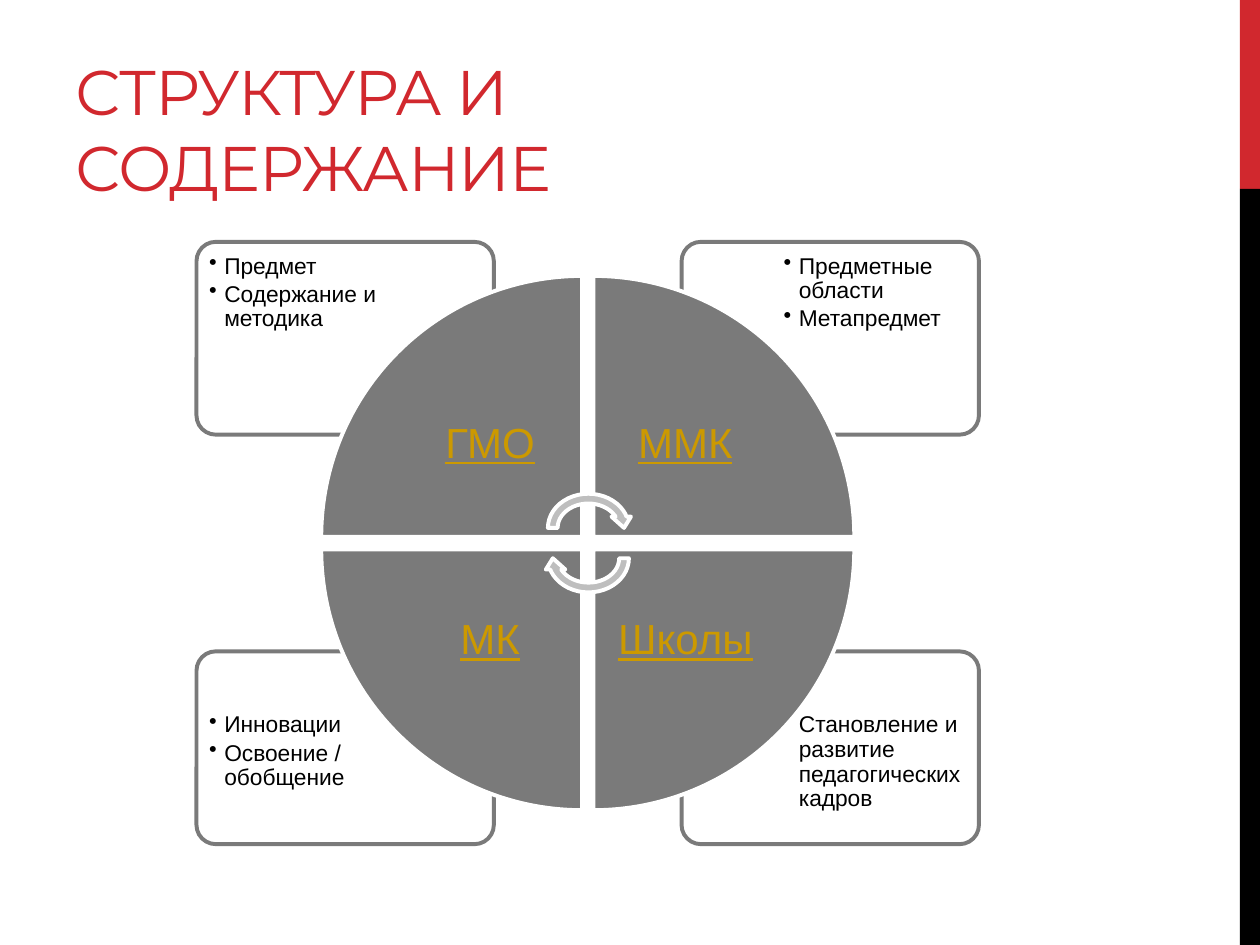
from dataclasses import dataclass

from lxml import etree
from pptx import Presentation
from pptx.dml.color import RGBColor
from pptx.enum.shapes import MSO_SHAPE
from pptx.enum.text import MSO_ANCHOR, MSO_AUTO_SIZE, PP_ALIGN
from pptx.oxml.ns import qn
from pptx.shapes.autoshape import Shape
from pptx.slide import Slide
from pptx.util import Inches, Pt

RECTANGLE = MSO_SHAPE.RECTANGLE
ROUNDED_RECTANGLE = MSO_SHAPE.ROUNDED_RECTANGLE
PIE_WEDGE = MSO_SHAPE.PIE_WEDGE
CIRCULAR_ARROW = MSO_SHAPE.CIRCULAR_ARROW
TITLE_ONLY = 5


@dataclass(frozen=True)
class Theme:
    red: str = "D1282E"
    black: str = "000000"
    white: str = "FFFFFF"
    gray: str = "7A7A7A"
    light_gray: str = "BEBEBE"
    gold: str = "CC9900"
    title_font: str = "Montserrat"
    body_font: str = "Arial"
    title_size: float = 36
    label_size: float = 24
    body_size: float = 13
    line_width: float = 2.25


@dataclass(frozen=True)
class Box:
    left: float
    top: float
    width: float
    height: float

    def lengths(self) -> tuple:
        return tuple(Inches(n) for n in (self.left, self.top, self.width, self.height))


@dataclass(frozen=True)
class Quadrant:
    column: int
    row: int
    rotation: int
    label: str
    bullets: tuple[str, ...]


THEME = Theme()
QUADRANTS = (
    Quadrant(0, 0, 0, "ГМО", ("Предмет", "Содержание и методика")),
    Quadrant(1, 0, 90, "ММК", ("Предметные области", "Метапредмет")),
    Quadrant(1, 1, 180, "Школы", ("Становление и развитие педагогических кадров",)),
    Quadrant(0, 1, 270, "МК", ("Инновации", "Освоение / обобщение")),
)
CARD_LEFTS, CARD_TOPS = (1.56, 5.41), (1.92, 5.17)
CARD_WIDTH, CARD_HEIGHT = 2.36, 1.53
CARD_TEXT_WIDTH, CARD_TEXT_HEIGHT, CARD_TEXT_MARGIN = 1.59, 1.08, 0.03
WEDGE_LEFTS, WEDGE_TOPS, WEDGE_SIDE = (2.55, 4.71), (2.19, 4.36), 2.07
LABEL_SIDE = 1.46


def add_filled_shape(slide: Slide, kind: MSO_SHAPE, box: Box, fill: str,
                     line: str | None = None, rotation: int = 0) -> Shape:
    shape = slide.shapes.add_shape(kind, *box.lengths())
    shape.shadow.inherit = False
    shape.rotation = rotation
    shape.fill.solid()
    shape.fill.fore_color.rgb = RGBColor.from_string(fill)
    if line is None:
        shape.line.fill.background()
    else:
        shape.line.color.rgb = RGBColor.from_string(line)
        shape.line.width = Pt(THEME.line_width)
    return shape


def add_text(slide: Slide, box: Box, lines: tuple[str, ...], inset: float,
             size: float, color: str) -> Shape:
    text_box = slide.shapes.add_textbox(*box.lengths())
    frame = text_box.text_frame
    frame.word_wrap = True
    frame.margin_left = frame.margin_right = Inches(inset)
    frame.margin_top = frame.margin_bottom = Inches(inset)
    frame.text = "\n".join(lines)
    for paragraph in frame.paragraphs:
        paragraph.line_spacing = 0.9
        font = paragraph.runs[0].font
        font.name = THEME.body_font
        font.size = Pt(size)
        font.color.rgb = RGBColor.from_string(color)
    return text_box


def add_title(slide: Slide, text: str) -> None:
    title = slide.shapes.title
    title.left, title.top, title.width, title.height = Box(0.5, 0.17, 6.33, 1.5).lengths()
    frame = title.text_frame
    frame.text = text
    frame.word_wrap = True
    frame.auto_size = MSO_AUTO_SIZE.NONE
    frame.vertical_anchor = MSO_ANCHOR.BOTTOM
    paragraph = frame.paragraphs[0]
    paragraph.alignment = PP_ALIGN.LEFT
    font = paragraph.runs[0].font
    font.name = THEME.title_font
    font.size = Pt(THEME.title_size)
    font.color.rgb = RGBColor.from_string(THEME.red)
    paragraph.runs[0]._r.get_or_add_rPr().set("spc", "-60")


def add_card(slide: Slide, quadrant: Quadrant) -> None:
    """Draw the outlined card with its bullets in the outer corner."""
    left, top = CARD_LEFTS[quadrant.column], CARD_TOPS[quadrant.row]
    card = add_filled_shape(slide, ROUNDED_RECTANGLE,
                            Box(left, top, CARD_WIDTH, CARD_HEIGHT), THEME.white, THEME.gray)
    card.adjustments[0] = 0.1
    color = card._element.spPr.find(qn("a:solidFill"))[0]
    etree.SubElement(color, qn("a:alpha"), val="90000")

    margin = CARD_TEXT_MARGIN
    text_left = left + (CARD_WIDTH - CARD_TEXT_WIDTH - margin if quadrant.column else margin)
    text_top = top + (CARD_HEIGHT - CARD_TEXT_HEIGHT - margin if quadrant.row else margin)
    text_box = add_text(slide, Box(text_left, text_top, CARD_TEXT_WIDTH, CARD_TEXT_HEIGHT),
                        quadrant.bullets, 0.07, THEME.body_size, THEME.black)
    for paragraph in text_box.text_frame.paragraphs:
        paragraph.level = 1
        paragraph.space_after = Pt(2)
        properties = paragraph._p.get_or_add_pPr()
        properties.set("marL", str(Inches(0.12)))
        properties.set("indent", str(-Inches(0.12)))
        etree.SubElement(properties, qn("a:buChar"), char="•")


def add_wedge(slide: Slide, quadrant: Quadrant) -> None:
    """Draw a quarter of the circle with its label in the inner corner."""
    left, top = WEDGE_LEFTS[quadrant.column], WEDGE_TOPS[quadrant.row]
    add_filled_shape(slide, PIE_WEDGE, Box(left, top, WEDGE_SIDE, WEDGE_SIDE),
                     THEME.gray, THEME.white, quadrant.rotation)
    offset = WEDGE_SIDE - LABEL_SIDE
    label_left = left + (0 if quadrant.column else offset)
    label_top = top + (0 if quadrant.row else offset)
    text_box = add_text(slide, Box(label_left, label_top, LABEL_SIDE, LABEL_SIDE),
                        (quadrant.label,), 0.19, THEME.label_size, THEME.gold)
    text_box.text_frame.vertical_anchor = MSO_ANCHOR.MIDDLE
    paragraph = text_box.text_frame.paragraphs[0]
    paragraph.alignment = PP_ALIGN.CENTER
    paragraph.runs[0].font.underline = True


def main() -> None:
    presentation = Presentation()
    presentation.slide_width, presentation.slide_height = Inches(10), Inches(7.5)
    slide = presentation.slides.add_slide(presentation.slide_layouts[TITLE_ONLY])

    add_filled_shape(slide, RECTANGLE, Box(9.84, 0, 0.16, 1.5), THEME.red)
    add_filled_shape(slide, RECTANGLE, Box(9.84, 1.5, 0.16, 6), THEME.black)
    add_title(slide, "СТРУКТУРА И СОДЕРЖАНИЕ")
    for quadrant in QUADRANTS:
        add_card(slide, quadrant)
    for quadrant in QUADRANTS:
        add_wedge(slide, quadrant)
    for top, rotation in ((3.88, 0), (4.12, 180)):
        add_filled_shape(slide, CIRCULAR_ARROW, Box(4.31, top, 0.72, 0.62),
                         THEME.light_gray, THEME.white, rotation)
    presentation.save("out.pptx")


if __name__ == "__main__":
    main()
